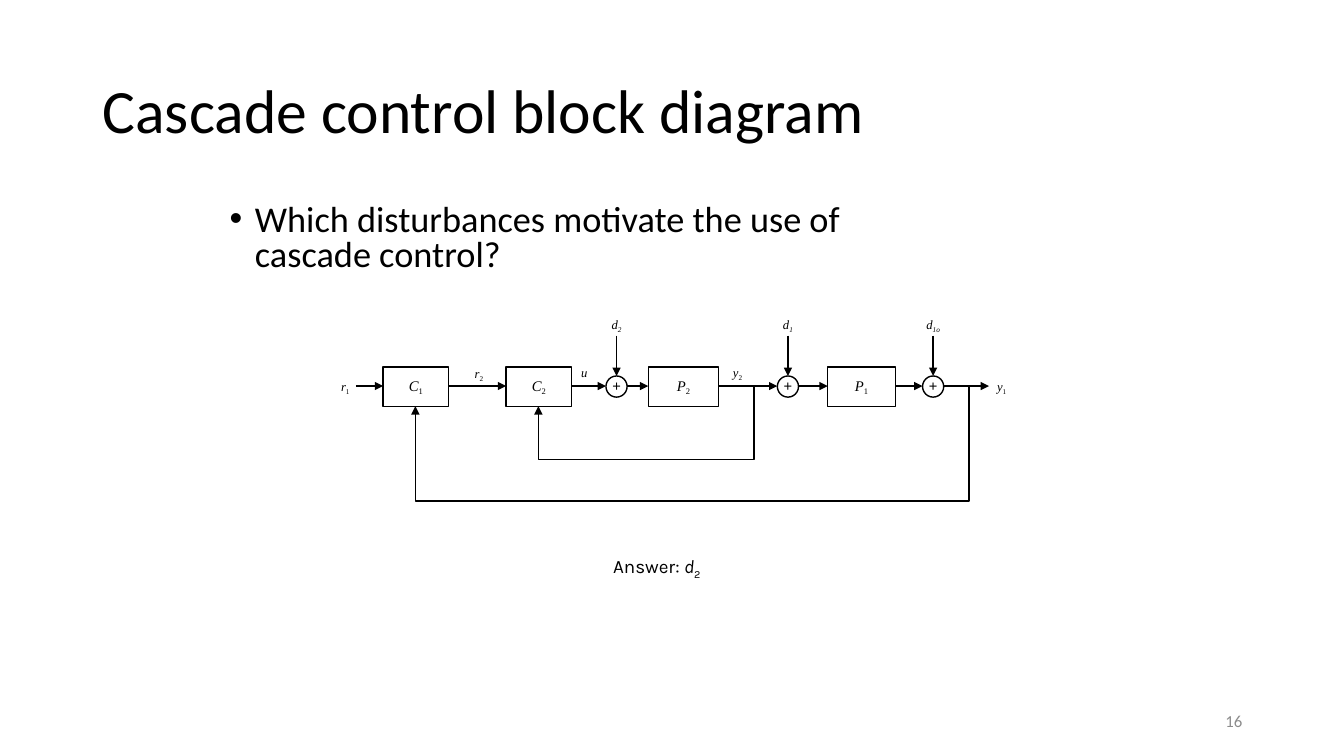
from pptx import Presentation
from pptx.dml.color import RGBColor
from pptx.enum.shapes import MSO_CONNECTOR, MSO_SHAPE
from pptx.enum.text import MSO_ANCHOR, PP_ALIGN
from pptx.oxml.ns import qn
from pptx.util import Inches, Pt
from lxml.etree import SubElement

BLACK, WHITE, GREY = "000000", "FFFFFF", "8C8C8C"
SERIF = "Times New Roman"


def colour(code):
    return RGBColor.from_string(code)


def symbol(letter, index="", slanted_index=False):
    """Spans of an italic letter with an optional subscript."""
    spans = [(letter, {"italic": True}, False)]
    if index:
        spans.append((index, {"italic": slanted_index}, True))
    return spans


def plain(text):
    return [(text, {}, False)]


class Diagram:
    def __init__(self, page):
        self.page = page

    def set_text(self, box, spans, font, size, ink=BLACK, align=PP_ALIGN.LEFT,
                 anchor=MSO_ANCHOR.TOP, insets=(0.1, 0.05), wrap=True, spacing=1.0, bullet=None):
        frame = box.text_frame
        side, end = map(Inches, insets)
        frame_format = {"word_wrap": wrap, "vertical_anchor": anchor, "margin_left": side,
                        "margin_right": side, "margin_top": end, "margin_bottom": end}
        for name, value in frame_format.items():
            setattr(frame, name, value)
        para = frame.paragraphs[0]
        if bullet:
            properties = para._p.get_or_add_pPr()
            properties.set("marL", str(Inches(0.25)))
            properties.set("indent", str(Inches(-0.25)))
            SubElement(properties, qn("a:buFont"), typeface="Arial")
            SubElement(properties, qn("a:buChar"), char=bullet)
        for name, value in {"alignment": align, "line_spacing": spacing}.items():
            setattr(para, name, value)
        for text, extra, lowered in spans:
            span = para.add_run()
            span.text = text
            for name, value in {"name": font, "size": Pt(size), **extra}.items():
                setattr(span.font, name, value)
            span.font.color.rgb = colour(ink)
            if lowered:
                span._r.get_or_add_rPr().set("baseline", "-25000")

    def text(self, place, spans, font, size, **style):
        box = self.page.shapes.add_textbox(*map(Inches, place))
        self.set_text(box, spans, font, size, **style)

    def label(self, place, spans, insets=(0.07, 0.04)):
        self.text(place, spans, SERIF, 9, align=PP_ALIGN.CENTER, insets=insets, wrap=False)

    def shape(self, kind, place, spans, font, **style):
        box = self.page.shapes.add_shape(kind, *map(Inches, place))
        box.shadow.inherit = False
        box.fill.solid()
        box.fill.fore_color.rgb = colour(WHITE)
        box.line.color.rgb = colour(BLACK)
        box.line.width = Pt(1)
        self.set_text(box, spans, font, 10.5, align=PP_ALIGN.CENTER,
                      anchor=MSO_ANCHOR.MIDDLE, wrap=False, **style)

    def arrow(self, start, end, kind=MSO_CONNECTOR.STRAIGHT):
        line = self.page.shapes.add_connector(kind, *map(Inches, (*start, *end)))
        line.line.color.rgb = colour(BLACK)
        line.line.width = Pt(1)
        properties = line._element.spPr
        SubElement(properties.find(qn("a:ln")), qn("a:tailEnd"), type="triangle")
        SubElement(properties, qn("a:effectLst"))
        return line

    def feedback(self, start, end, depth):
        """Elbow arrow that drops to depth, runs left and rises to its end."""
        span, rise = start[0] - end[0], end[1] - start[1]
        left = (start[0] + end[0] - rise) / 2
        top = (start[1] + end[1] - span) / 2
        line = self.arrow((left, top), (left + rise, top + span), MSO_CONNECTOR.ELBOW)
        properties = line._element.spPr
        properties.find(qn("a:xfrm")).set("rot", "5400000")
        geometry = properties.find(qn("a:prstGeom"))
        guides = geometry.find(qn("a:avLst"))
        if guides is None:
            guides = SubElement(geometry, qn("a:avLst"))
        bend = round((depth - start[1]) / rise * 100000)
        SubElement(guides, qn("a:gd"), name="adj1", fmla=f"val {bend}")


def main():
    deck = Presentation()
    deck.slide_width, deck.slide_height = Inches(13.33), Inches(7.5)
    page = deck.slides.add_slide(deck.slide_layouts[6])
    diagram = Diagram(page)

    # Title and question
    diagram.text((0.92, 0.4, 11.5, 1.45), plain("Cascade control block diagram"),
                 "Calibri", 44, anchor=MSO_ANCHOR.MIDDLE, spacing=0.9)
    diagram.text((2.18, 1.98, 6.75, 0.83),
                 plain("Which disturbances motivate the use of cascade control?"),
                 "Calibri", 25.9, spacing=0.8, bullet="•")

    # Feedback loops
    axis, block_height, node = 3.83, 0.39, 0.21
    block_bottom = 4.03
    diagram.feedback((9.61, axis), (4.12, block_bottom), 4.97)
    diagram.feedback((7.48, axis), (5.34, block_bottom), 4.56)

    # Signal path along the axis
    for start, end in [(3.53, 3.8), (4.45, 5.02), (5.67, 6.01), (6.21, 6.43), (7.13, 7.71),
                       (7.92, 8.21), (8.88, 9.15), (9.36, 9.81)]:
        diagram.arrow((start, axis), (end, axis))

    # Controllers and processes
    for left, width, letter, index in [(3.8, 0.65, "C", "1"), (5.02, 0.65, "C", "2"),
                                       (6.43, 0.7, "P", "2"), (8.21, 0.67, "P", "1")]:
        diagram.shape(MSO_SHAPE.RECTANGLE, (left, block_bottom - block_height, width, block_height),
                      symbol(letter, index), SERIF)

    # Summing nodes with their disturbances
    for left, index, width in [(6.01, "2", 0.16), (7.71, "1", 0.16), (9.15, "1o", 0.21)]:
        centre = left + node / 2
        diagram.shape(MSO_SHAPE.OVAL, (left, 3.73, node, node), plain("+"), "Arial",
                      insets=(0, 0), spacing=0.9)
        diagram.arrow((centre, 3.33), (centre, 3.73))
        diagram.label((centre - width / 2, 3.11, width, 0.21),
                      symbol("d", index, slanted_index=True), insets=(0.03, 0.03))

    # Signal names
    diagram.label((3.32, 3.73, 0.21, 0.21), symbol("r", "1"), insets=(0.06, 0.03))
    for left, top, width, letter, index in [
            (4.63, 3.59, 0.24, "r", "2"), (5.69, 3.58, 0.21, "u", ""),
            (7.19, 3.58, 0.25, "y", "2"), (9.81, 3.72, 0.25, "y", "1")]:
        diagram.label((left, top, width, 0.23), symbol(letter, index))

    # Answer and page number
    diagram.text((4.5, 5.46, 4.03, 0.32), plain("Answer: ") + symbol("d", "2"),
                 "Karla", 13.5, align=PP_ALIGN.CENTER, insets=(0.07, 0.04))
    diagram.text((9.42, 6.95, 3, 0.4), plain("16"), "Calibri", 12, ink=GREY,
                 align=PP_ALIGN.RIGHT, anchor=MSO_ANCHOR.MIDDLE)

    deck.save("out.pptx")


if __name__ == "__main__":
    main()
